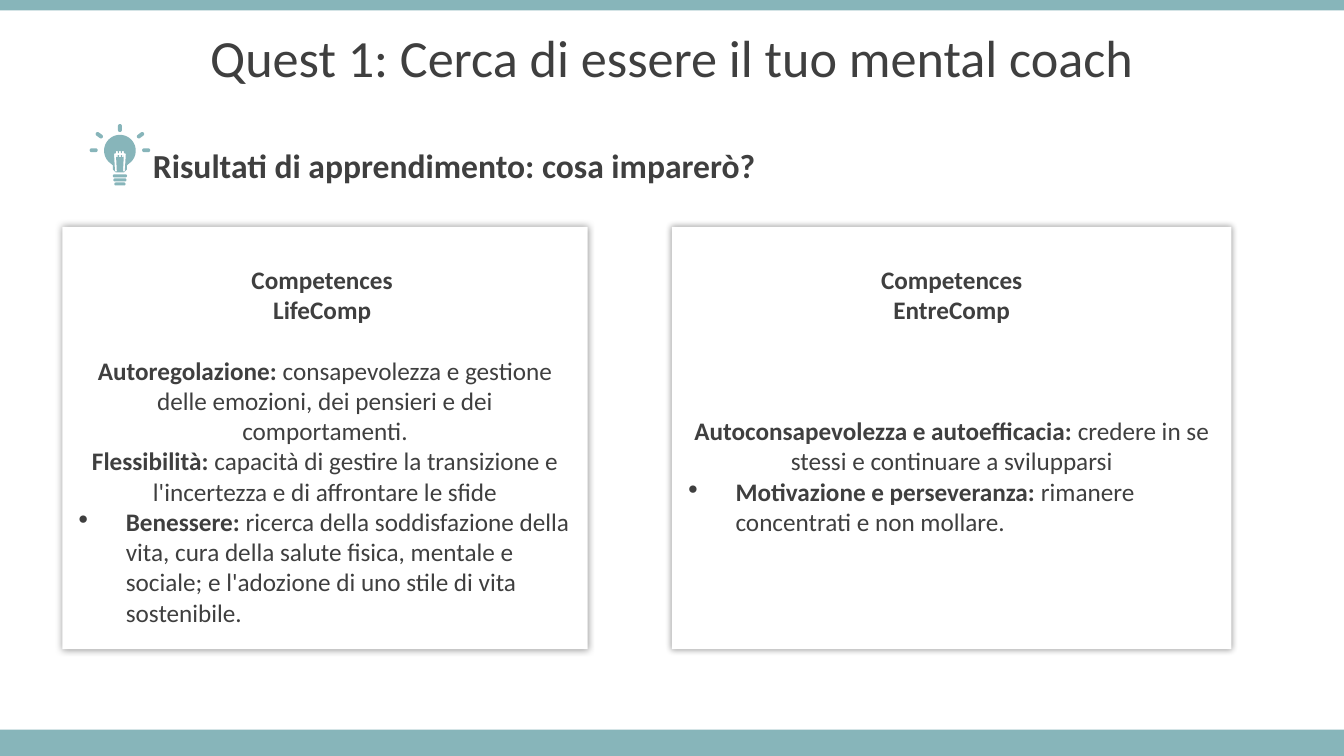
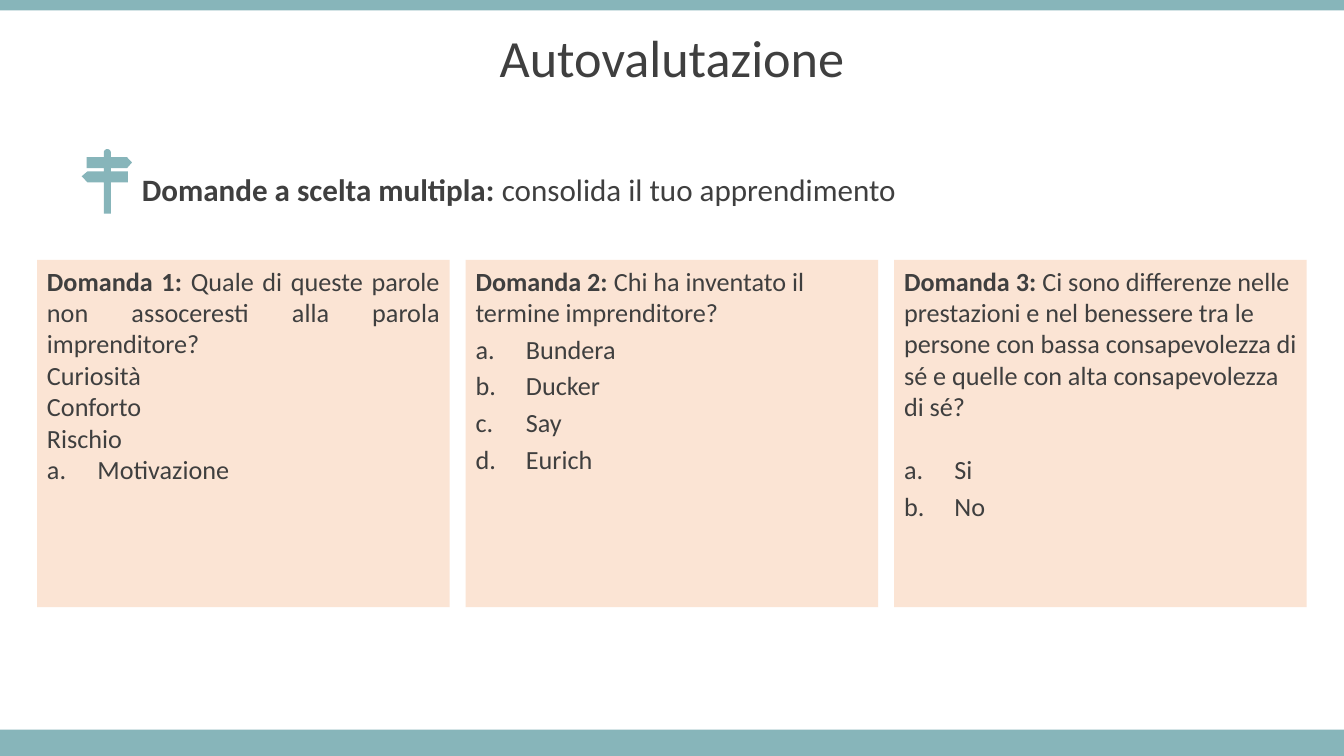
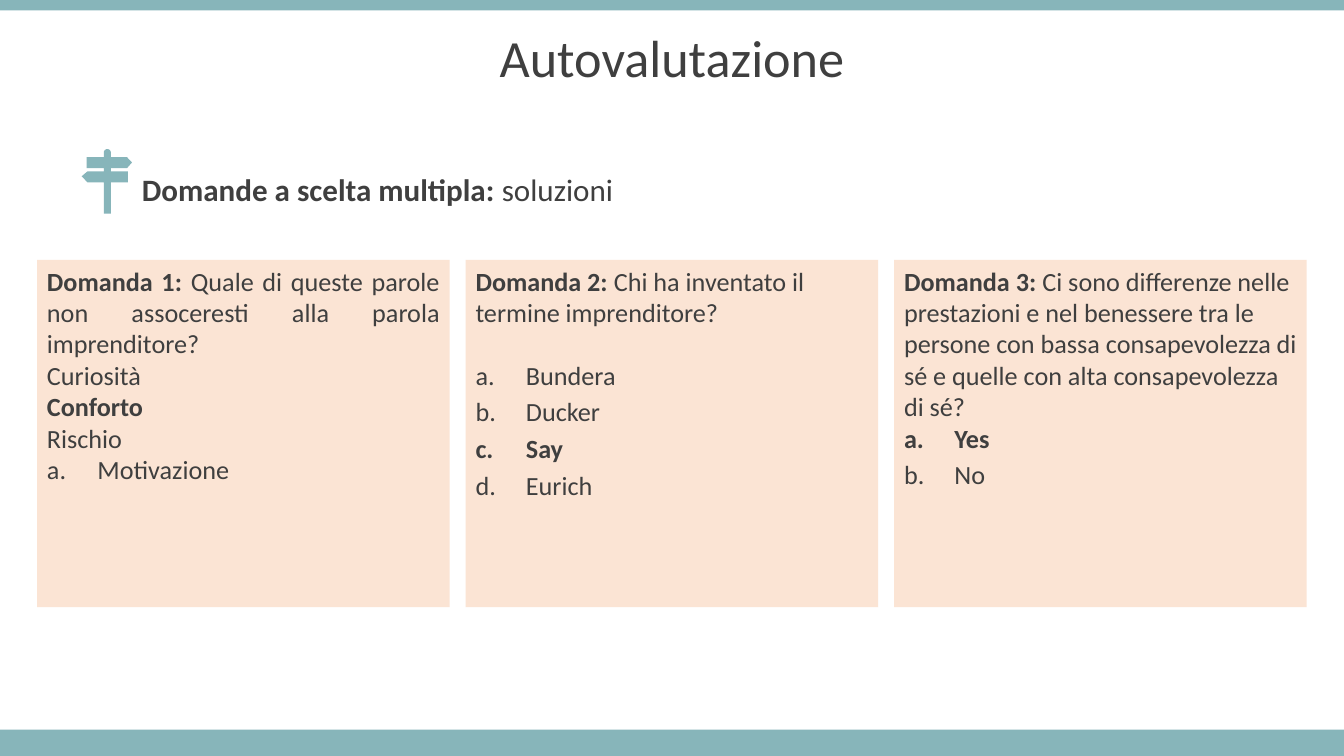
from dataclasses import dataclass
from math import atan2, cos, pi, radians, sin

from lxml import etree
from pptx import Presentation
from pptx.dml.color import RGBColor
from pptx.enum.shapes import MSO_SHAPE
from pptx.enum.text import MSO_ANCHOR, PP_ALIGN
from pptx.oxml.ns import qn
from pptx.util import Pt

LEFT, CENTER, JUSTIFY = PP_ALIGN.LEFT, PP_ALIGN.CENTER, PP_ALIGN.JUSTIFY
TOP, MIDDLE = MSO_ANCHOR.TOP, MSO_ANCHOR.MIDDLE
RECTANGLE = MSO_SHAPE.RECTANGLE
TITLE_ONLY = 5
PAGE_WIDTH, PAGE_HEIGHT = 960, 540

Point = tuple[float, float]
Contour = list[Point]


@dataclass(frozen=True)
class Theme:
    teal: str = "87B5BA"
    peach: str = "FBE4D4"
    white: str = "FFFFFF"
    ink: str = "3F3F3F"
    shadow: str = "000000"
    font: str = "Calibri"
    title: float = 37.3
    heading: float = 24
    subheading: float = 22.2
    competence: float = 18
    question: float = 18.7


THEME = Theme()


@dataclass(frozen=True)
class Area:
    left: float
    top: float
    width: float
    height: float

    def lengths(self) -> tuple:
        return Pt(self.left), Pt(self.top), Pt(self.width), Pt(self.height)


@dataclass(frozen=True)
class Span:
    text: str
    bold: bool = False


@dataclass(frozen=True)
class Line:
    spans: tuple[Span, ...]
    align: PP_ALIGN = LEFT
    before: float = 0
    marker: str = ""  # "a." numbers the line, any other text is its bullet


@dataclass(frozen=True)
class Card:
    area: Area
    lines: list[Line]


# Text
def add_marker(para, marker: str) -> None:
    properties = para._p.get_or_add_pPr()
    properties.set("marL", str(Pt(36)))
    properties.set("indent", str(-Pt(36)))
    color = etree.SubElement(properties, qn("a:buClr"))
    etree.SubElement(color, qn("a:srgbClr"), val=THEME.ink)
    if marker == "a.":
        etree.SubElement(properties, qn("a:buAutoNum"), type="alphaLcPeriod")
    else:
        etree.SubElement(properties, qn("a:buChar"), char=marker)


def write(box, lines: list[Line], *, size: float, anchor=TOP, spacing: float = 1,
          margins: Point = (7.2, 3.6), top_margin: float | None = None) -> None:
    frame = box.text_frame
    frame.word_wrap = True
    frame.vertical_anchor = anchor
    frame.margin_left = frame.margin_right = Pt(margins[0])
    frame.margin_bottom = Pt(margins[1])
    frame.margin_top = Pt(margins[1] if top_margin is None else top_margin)
    for index, line in enumerate(lines):
        para = frame.add_paragraph() if index else frame.paragraphs[0]
        para.alignment = line.align
        para.line_spacing = spacing
        para.space_before = Pt(line.before)
        if line.marker:
            add_marker(para, line.marker)
        for span in line.spans:
            run = para.add_run()
            run.text = span.text
            run.font.name = THEME.font
            run.font.size = Pt(size)
            run.font.bold = span.bold
            run.font.color.rgb = RGBColor.from_string(THEME.ink)


def labelled(label: str, text: str, align: PP_ALIGN = LEFT, before: float = 0,
             marker: str = "") -> Line:
    return Line((Span(label, True), Span(text)), align, before, marker)


# Shapes
def paint(shape, color: str) -> None:
    shape.shadow.inherit = False
    shape.fill.solid()
    shape.fill.fore_color.rgb = RGBColor.from_string(color)
    shape.line.fill.background()


def add_rectangle(page, area: Area, color: str):
    box = page.shapes.add_shape(RECTANGLE, *area.lengths())
    paint(box, color)
    return box


def add_glow_shadow(shape) -> None:
    effects = shape._element.spPr.find(qn("a:effectLst"))
    shadow = etree.SubElement(effects, qn("a:outerShdw"), blurRad=str(Pt(5)),
                              dist="0", dir="0", algn="ctr", rotWithShape="0")
    color = etree.SubElement(shadow, qn("a:srgbClr"), val=THEME.shadow)
    etree.SubElement(color, qn("a:alpha"), val="40000")


def add_heading(page, area: Area, line: Line, *, size: float, spacing: float = 1) -> None:
    box = page.shapes.add_textbox(*area.lengths())
    write(box, [line], size=size, spacing=spacing, anchor=MIDDLE)


# Icons
def arc(center: Point, radius: float, start: float, end: float, steps: int) -> Contour:
    angles = [radians(start + (end - start) * step / steps) for step in range(steps + 1)]
    return [(center[0] + radius * cos(a), center[1] + radius * sin(a)) for a in angles]


def capsule(start: Point, end: Point, radius: float) -> Contour:
    angle = atan2(end[1] - start[1], end[0] - start[0]) * 180 / pi
    return (arc(start, radius, angle + 90, angle + 270, 8)
            + arc(end, radius, angle - 90, angle + 90, 8))


def add_icon(page, contours: list[Contour]) -> None:
    outlines = [[(Pt(x), Pt(y)) for x, y in contour] for contour in contours]
    builder = page.shapes.build_freeform(*outlines[0][0], scale=1.0)
    builder.add_line_segments(outlines[0][1:], close=True)
    for outline in outlines[1:]:
        builder.move_to(*outline[0])
        builder.add_line_segments(outline[1:], close=True)
    paint(builder.convert_to_shape(), THEME.teal)


def bulb_contours() -> list[Contour]:
    axis = 85.7
    glass = arc((axis, 107.6), 11.3, 135, 405, 36)
    neck = [(5, 118.1), (5, 121), (3, 123.1)]
    body = (glass + [(axis + x, y) for x, y in neck]
            + [(axis - x, y) for x, y in reversed(neck)])
    half = [(0.7, 108), (0.7, 109.4), (1.5, 109.4), (1.5, 108), (2.9, 108),
            (2.9, 109.4), (4.2, 109.8), (3.5, 122.4), (2.2, 122.4), (2.8, 110.9),
            (2.7, 112.3), (1.6, 112.3), (1.6, 110.9), (0.6, 110.9), (0.6, 112.3)]
    filament = ([(axis - x, y) for x, y in half]
                + [(axis + x, y) for x, y in reversed(half)])
    rays = [capsule((axis, 90), (axis, 92.9), 1.4)]
    for side in (-1, 1):
        rays.append(capsule((axis + side * 20.2, 107.3), (axis + side * 17.3, 107.3), 1.4))
        rays.append(capsule((axis + side * 15.9, 95.7), (axis + side * 13.5, 97.5), 1.4))
    base = [capsule((axis - reach, y), (axis + reach, y), 1.1)
            for reach, y in ((4, 125.6), (3.6, 128.5), (2.9, 131.4))]
    return [body, filament, *rays, *base]


def signpost_contours() -> list[Contour]:
    cap = arc((76.7, 109), 2.5, 180, 360, 12)
    right = [(79.2, 112.3), (90.7, 112.3), (94.3, 116.1), (90.7, 120.2), (79.2, 120.2),
             (79.2, 122.4), (91.4, 122.4), (91.4, 130.3), (79.2, 130.3), (79.2, 152.6)]
    left = [(74.2, 152.6), (74.2, 130.3), (62.6, 130.3), (58.3, 126), (62.6, 122.4),
            (74.2, 122.4), (74.2, 120.2), (61.9, 120.2), (61.9, 112.3), (74.2, 112.3)]
    return [cap + right + left]


# Pages
def add_bands(page, layout) -> None:
    """Draw the bands and move them to the layout that all pages share."""
    for area in (Area(0, 521.2, PAGE_WIDTH, 18.8), Area(0, 0, PAGE_WIDTH, 7.5)):
        band = add_rectangle(page, area, THEME.teal)
        layout.shapes._spTree.append(band._element)


def add_page(deck, title: str):
    page = deck.slides.add_slide(deck.slide_layouts[TITLE_ONLY])
    box = page.shapes.title
    box.left, box.top, box.width, box.height = Area(0, 13, PAGE_WIDTH, 60.5).lengths()
    write(box, [Line((Span(title),), CENTER)], size=THEME.title, spacing=0.9, anchor=MIDDLE)
    return page


def add_quest_page(deck, cards: list[Card]):
    page = add_page(deck, "Quest 1: Cerca di essere il tuo mental coach")
    add_icon(page, bulb_contours())
    add_heading(page, Area(102.2, 103, 468.7, 29.5),
                Line((Span("Risultati di apprendimento: cosa imparerò?", True),)),
                size=THEME.heading)
    for card in cards:
        box = add_rectangle(page, card.area, THEME.white)
        add_glow_shadow(box)
        write(box, card.lines, size=THEME.competence, margins=(9.4, 5), top_margin=26.8)
    return page


def add_question_page(deck, subject: str, questions: list[list[Line]]) -> None:
    page = add_page(deck, "Autovalutazione")
    add_heading(page, Area(94.3, 123, 642, 29.5),
                labelled("Domande a scelta multipla: ", subject),
                size=THEME.subheading, spacing=0.8)
    add_icon(page, signpost_contours())
    for column, lines in enumerate(questions):
        box = add_rectangle(page, Area(26.5 + 306.1 * column, 185.7, 294.7, 248), THEME.peach)
        write(box, lines, size=THEME.question)


# Content
def competence_heading(first: str, second: str) -> list[Line]:
    return [Line((Span(text, True),), CENTER) for text in (first, second)]


def choices(answers: list[str], solution: str, first_gap: float) -> list[Line]:
    return [Line((Span(answer, answer == solution),), LEFT,
                 3.7 if index else first_gap, "a.")
            for index, answer in enumerate(answers)]


def questions(solutions: tuple[str, ...], yes: str, gaps: Point) -> list[list[Line]]:
    """Build the three questions; the given solutions are bold."""
    words = ["Curiosità", "Conforto", "Rischio", "Motivazione"]
    first = [labelled("Domanda 1: ", "Quale di queste parole non assoceresti alla parola "
                      "imprenditore?", JUSTIFY)]
    first += [Line((Span(word, word in solutions),), JUSTIFY,
                   marker="a." if word == words[-1] else "") for word in words]
    names = ["Bundera", "Ducker", "Say", "Eurich"]
    chosen = "Say" if "Say" in solutions else ""
    second = [labelled("Domanda 2: ", "Chi ha inventato il termine imprenditore?")]
    second += choices(names, chosen, gaps[0])
    third = [labelled("Domanda 3: ", "Ci sono differenze nelle prestazioni e nel benessere "
                      "tra le persone con bassa consapevolezza di sé e quelle con alta "
                      "consapevolezza di sé?")]
    third += choices([yes, "No"], yes if yes in solutions else "", gaps[1])
    return [first, second, third]


LIFE_CARD = Card(Area(44.5, 162, 375.3, 301.7), [
    *competence_heading("Competences ", "LifeComp "),
    labelled("Autoregolazione: ", "consapevolezza e gestione delle emozioni, dei pensieri "
             "e dei comportamenti.", CENTER, 21.6),
    labelled("Flessibilità: ", "capacità di gestire la transizione e l'incertezza e di "
             "affrontare le sfide", CENTER),
    labelled("Benessere: ", "ricerca della soddisfazione della vita, cura della salute "
             "fisica, mentale e sociale; e l'adozione di uno stile di vita sostenibile.",
             marker="∙"),
])
ENTREPRENEUR_CARD = Card(Area(480, 162, 399.6, 301.7), [
    *competence_heading("Competences", "EntreComp"),
    labelled("Autoconsapevolezza e autoefficacia: ", "credere in se stessi e continuare a "
             "svilupparsi", CENTER, 64.8),
    labelled("Motivazione e perseveranza: ", "rimanere concentrati e non mollare.",
             marker="∙"),
])
BLANK_LINE = 22.3


def main() -> None:
    deck = Presentation()
    deck.slide_width, deck.slide_height = Pt(PAGE_WIDTH), Pt(PAGE_HEIGHT)
    quest = add_quest_page(deck, [LIFE_CARD, ENTREPRENEUR_CARD])
    add_bands(quest, deck.slide_layouts[TITLE_ONLY])
    add_question_page(deck, "consolida il tuo apprendimento",
                      questions((), "Si", (3.7, BLANK_LINE)))
    add_question_page(deck, "soluzioni",
                      questions(("Conforto", "Say", "Yes"), "Yes", (BLANK_LINE, 0)))
    deck.save("out.pptx")


if __name__ == "__main__":
    main()
